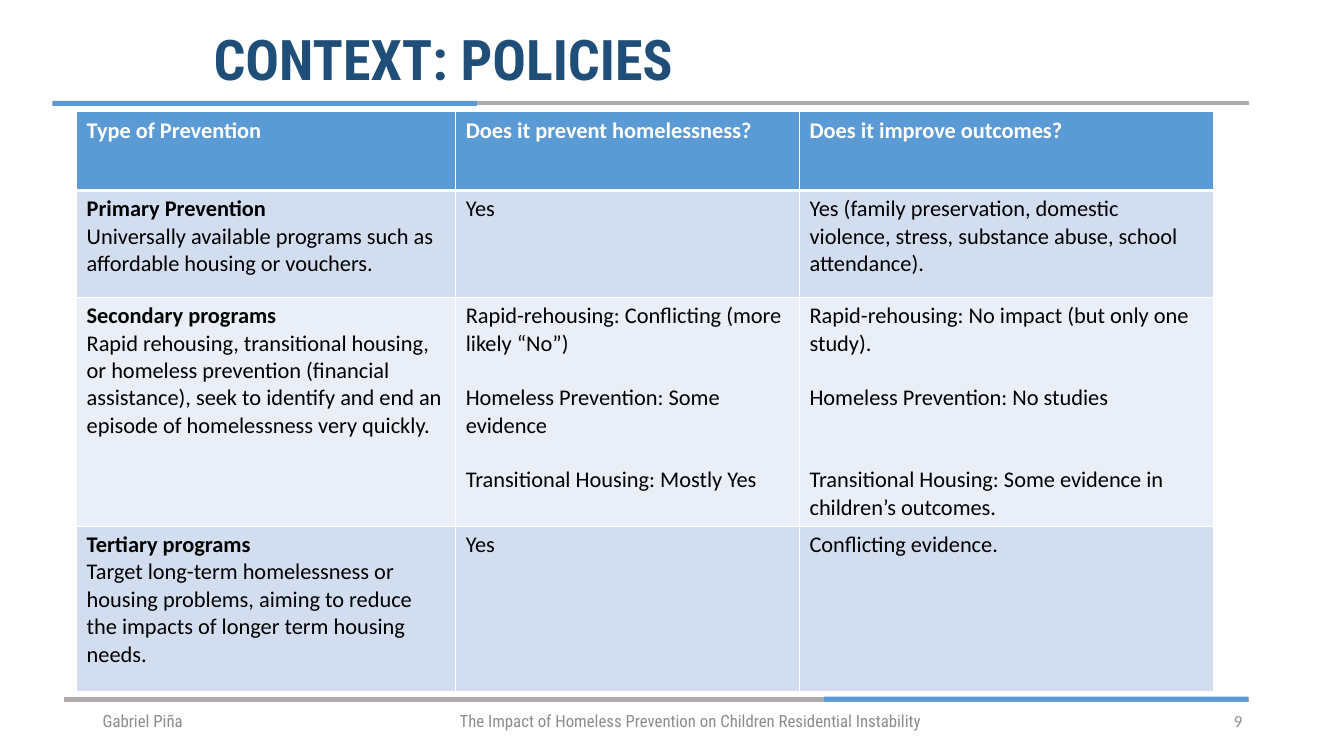
from lxml import etree
from pptx import Presentation, util as u
from pptx.dml.color import RGBColor
from pptx.enum import shapes, text
from pptx.oxml.ns import qn

CELL = 0.1  # inches per grid column and per grid row
BLANK_LINE = 19.5
HEADINGS = ["Type of Prevention", "Does it prevent homelessness?", "Does it improve outcomes?"]

# Each paragraph is (text, bold, blank lines above it)
POLICIES = [
    [
        [("Primary Prevention", True, 0),
         ("Universally available programs such as affordable housing or vouchers.", False, 0)],
        [("Yes", False, 0)],
        [("Yes (family preservation, domestic violence, stress, substance abuse, "
          "school attendance).", False, 0)],
    ],
    [
        [("Secondary programs", True, 0),
         ("Rapid rehousing, transitional housing, or homeless prevention (financial assistance), "
          "seek to identify and end an episode of homelessness very quickly.", False, 0)],
        [("Rapid-rehousing: Conflicting (more likely “No”)", False, 0),
         ("Homeless Prevention: Some evidence", False, 1),
         ("Transitional Housing: Mostly Yes", False, 1)],
        [("Rapid-rehousing: No impact (but only one study).", False, 0),
         ("Homeless Prevention: No studies", False, 1),
         ("Transitional Housing: Some evidence in children’s outcomes.", False, 2)],
    ],
    [
        [("Tertiary programs", True, 0),
         ("Target long-term homelessness or housing problems, aiming to reduce the impacts "
          "of longer term housing needs.", False, 0)],
        [("Yes", False, 0)],
        [("Conflicting evidence.", False, 0)],
    ],
]


def color(hex_value):
    return RGBColor.from_string(hex_value)


def grid(count):
    return u.Inches(count * CELL)


class PolicySlide:
    blue, gray, navy, muted = "5B9BD5", "AFABAB", "1F4E79", "8C8C8C"
    white, black = "FFFFFF", "000000"
    bands = ["D2DEEF", "EAEFF7"]
    heading_font, body_font = "Roboto Condensed", "Calibri"

    def __init__(self, presentation):
        self.slide = presentation.slides.add_slide(presentation.slide_layouts[6])

    def bar(self, kind, fill, *box):
        shape = self.slide.shapes.add_shape(kind, *map(grid, box))
        shape.shadow.inherit = False
        shape.fill.solid()
        shape.fill.fore_color.rgb = color(fill)
        shape.line.fill.background()

    def add_words(self, paragraph, words, ink, **formats):
        run = paragraph.add_run()
        run.text = words
        run.font.color.rgb = color(ink)
        for name, value in formats.items():
            setattr(run.font, name, value)

    def label(self, words, box, ink, align=text.PP_ALIGN.LEFT, spacing=1.0, **formats):
        frame = self.slide.shapes.add_textbox(*map(grid, box)).text_frame
        frame.word_wrap = True
        frame.vertical_anchor = text.MSO_ANCHOR.MIDDLE
        paragraph = frame.paragraphs[0]
        paragraph.alignment = align
        paragraph.line_spacing = spacing
        self.add_words(paragraph, words, ink, **formats)

    def borders(self, cell, top, bottom):
        """Draw white cell edges; top and bottom are widths in points."""
        properties = cell._tc.get_or_add_tcPr()
        edges = {"a:lnL": 1, "a:lnR": 1, "a:lnT": top, "a:lnB": bottom}
        for index, (tag, width) in enumerate(edges.items()):
            line = etree.Element(qn(tag), w=str(u.Pt(width)))
            fill = etree.SubElement(line, qn("a:solidFill"))
            etree.SubElement(fill, qn("a:srgbClr"), val=self.white)
            properties.insert(index, line)

    def fill_cell(self, cell, paragraphs, fill, ink):
        cell.fill.solid()
        cell.fill.fore_color.rgb = color(fill)
        frame = cell.text_frame
        for index, (words, bold, blank_lines) in enumerate(paragraphs):
            paragraph = frame.add_paragraph() if index else frame.paragraphs[0]
            paragraph.space_before = u.Pt(blank_lines * BLANK_LINE)
            self.add_words(paragraph, words, ink, name=self.body_font, size=u.Pt(16), bold=bold)

    def table(self, left, top, widths, heights, rows):
        table = self.slide.shapes.add_table(
            len(heights), len(widths),
            *map(grid, (left, top, sum(widths), sum(heights)))).table
        for column, width in zip(table.columns, widths):
            column.width = grid(width)
        for row, height in zip(table.rows, heights):
            row.height = grid(height)
        for row_index, row in enumerate(rows):
            is_header = row_index == 0
            fill = self.blue if is_header else self.bands[(row_index - 1) % 2]
            ink = self.white if is_header else self.black
            for column_index, paragraphs in enumerate(row):
                cell = table.cell(row_index, column_index)
                self.fill_cell(cell, paragraphs, fill, ink)
                self.borders(cell, 3 if row_index == 1 else 1, 3 if is_header else 1)


def main():
    presentation = Presentation()
    presentation.slide_width = u.Inches(13.33)
    presentation.slide_height = u.Inches(7.5)
    page = PolicySlide(presentation)

    preset = shapes.MSO_SHAPE
    for rule_top, accent_left, accent_top in [(9.3, 5.2, 10), (68.5, 81.7, 69.1)]:
        page.bar(preset.MATH_MINUS, page.gray, -14.9, rule_top, 160, 1.8)
        page.bar(preset.RECTANGLE, page.blue, accent_left, accent_top, 42.1, 0.5)

    page.label("CONTEXT: POLICIES", (20.2, 2.4, 93.1, 7.6), page.navy, spacing=0.9,
               name=page.heading_font, size=u.Pt(40), bold=True)

    left, right = text.PP_ALIGN.LEFT, text.PP_ALIGN.RIGHT
    footer = [
        ("Gabriel Piña", 9.2, 30, left, page.heading_font),
        ("The Impact of Homeless Prevention on Children Residential Instability",
         44.6, 51.9, left, page.heading_font),
        ("9", 94.2, 30, right, page.body_font),
    ]
    for words, start, width, align, font in footer:
        page.label(words, (start, 69.5, width, 4), page.muted, align, name=font, size=u.Pt(12))

    header = [[(heading, True, 0)] for heading in HEADINGS]
    page.table(7.6, 11.1, [37.6, 34.1, 41.1], [7.8, 10.6, 22.7, 16.4], [header, *POLICIES])

    presentation.save("out.pptx")


if __name__ == "__main__":
    main()
